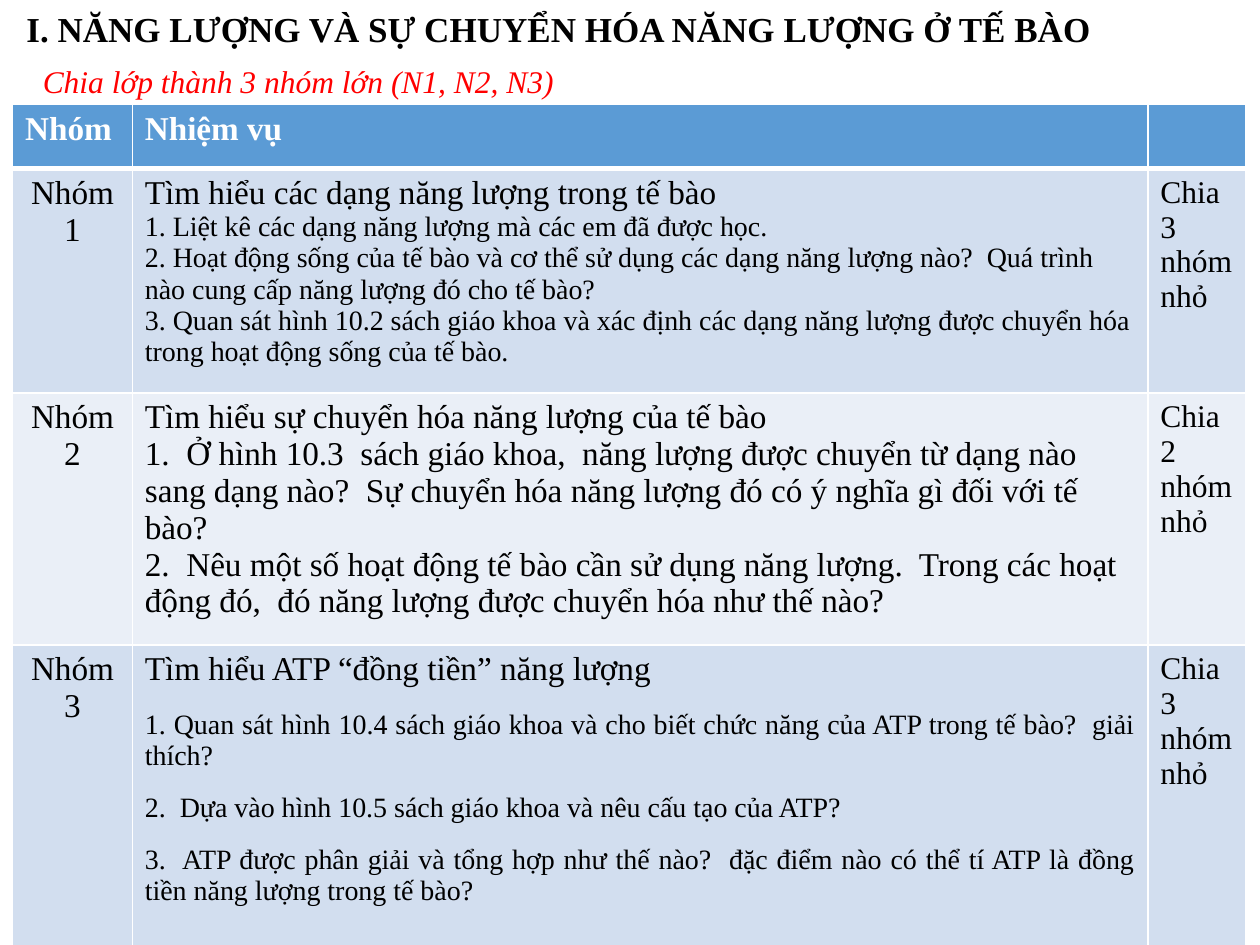
from dataclasses import dataclass

from lxml import etree
from pptx import Presentation
from pptx import util as u
from pptx.dml.color import RGBColor
from pptx.enum import text
from pptx.oxml.ns import qn

WIDE, HIGH = 10, 7.5
FACE = "Times New Roman"
BLACK, WHITE, RED = "000000", "FFFFFF", "FF0000"
HEAD, BAND, PALE = "5B9BD5", "D2DEEF", "EAEFF7"
COLS = [0.95, 8.06, 0.78]
ROWS = [0.51, 1.78, 2, 2.41]
LEFT, MID, JUST = text.PP_ALIGN.LEFT, text.PP_ALIGN.CENTER, text.PP_ALIGN.JUSTIFY


@dataclass
class Group:
    topic: str
    tasks: list[str]
    teams: int
    size: int = 16
    align: text.PP_ALIGN = LEFT
    gap: int = 0


GROUPS = [
    Group("Tìm hiểu các dạng năng lượng trong tế bào", [
        "1. Liệt kê các dạng năng lượng mà các em đã được học.",
        "2. Hoạt động sống của tế bào và cơ thể sử dụng các dạng năng lượng nào?  "
        "Quá trình nào cung cấp năng lượng đó cho tế bào?",
        "3. Quan sát hình 10.2 sách giáo khoa và xác định các dạng năng lượng "
        "được chuyển hóa trong hoạt động sống của tế bào."], 3),
    Group("Tìm hiểu sự chuyển hóa năng lượng của tế bào", [
        "1.  Ở hình 10.3  sách giáo khoa,  năng lượng được chuyển từ dạng nào "
        "sang dạng nào?  Sự chuyển hóa năng lượng đó có ý nghĩa gì đối với tế bào?",
        "2.  Nêu một số hoạt động tế bào cần sử dụng năng lượng.  Trong các hoạt "
        "động đó,  đó năng lượng được chuyển hóa như thế nào?"], 2, size=19),
    Group("Tìm hiểu ATP “đồng tiền” năng lượng", [
        "1. Quan sát hình 10.4 sách giáo khoa và cho biết chức năng của ATP "
        "trong tế bào?  giải thích?",
        "2.  Dựa vào hình 10.5 sách giáo khoa và nêu cấu tạo của ATP?",
        "3.  ATP được phân giải và tổng hợp như thế nào?  đặc điểm nào có thể tí "
        "ATP là đồng tiền năng lượng trong tế bào?"], 3, align=JUST, gap=6),
]


def tint(code: str) -> RGBColor:
    return RGBColor.from_string(code)


def write(para, words: str, size: float, code: str = BLACK, bold: bool = False,
          italic: bool = False, align: text.PP_ALIGN = LEFT, gap: float = 0) -> None:
    para.text = words
    para.alignment = align
    para.space_before = para.space_after = u.Pt(gap)
    font = para.font
    font.name, font.size, font.bold, font.italic = FACE, u.Pt(size), bold, italic
    font.color.rgb = tint(code)


def place(shape, left: float, top: float, width: float, height: float) -> None:
    shape.left, shape.top = u.Inches(left), u.Inches(top)
    shape.width, shape.height = u.Inches(width), u.Inches(height)


def edge(cell, side: str, points: float) -> None:
    line = etree.SubElement(cell._tc.get_or_add_tcPr(), qn(f"a:ln{side}"),
                            w=str(u.Pt(points)))
    fill = etree.SubElement(line, qn("a:solidFill"))
    etree.SubElement(fill, qn("a:srgbClr"), val=WHITE)


def dress(cell, row: int) -> None:
    for side in "LRTB":
        thick = (row, side) in ((0, "B"), (1, "T"))
        edge(cell, side, 3 if thick else 1)
    cell.fill.solid()
    cell.fill.fore_color.rgb = tint(HEAD if row == 0 else BAND if row % 2 else PALE)


def show(table, row: int, group: Group) -> None:
    name, task, split = (table.cell(row, col).text_frame for col in range(3))
    write(name.paragraphs[0], f"Nhóm {row}", 19, align=MID)
    write(task.paragraphs[0], group.topic, 19, align=group.align, gap=group.gap)
    for item in group.tasks:
        write(task.add_paragraph(), item, group.size, align=group.align, gap=group.gap)
    write(split.paragraphs[0], f"Chia {group.teams} nhóm nhỏ", 18)


def main() -> None:
    deck = Presentation()
    deck.slide_width, deck.slide_height = u.Inches(WIDE), u.Inches(HIGH)
    slide = deck.slides.add_slide(deck.slide_layouts[5])

    # Title
    title = slide.shapes.title
    place(title, 0.11, 0.05, 8.67, 0.84)
    frame = title.text_frame
    frame.auto_size = text.MSO_AUTO_SIZE.NONE
    frame.vertical_anchor = text.MSO_ANCHOR.TOP
    write(frame.paragraphs[0], "I. NĂNG LƯỢNG VÀ SỰ CHUYỂN HÓA NĂNG LƯỢNG Ở TẾ BÀO",
          20, bold=True)
    frame.paragraphs[0].line_spacing = 0.9

    # Instruction
    note = slide.shapes.add_textbox(0, 0, 0, 0)
    place(note, 0.16, 0.37, 9.23, 0.58)
    frame = note.text_frame
    frame.word_wrap = True
    frame.margin_left = u.Inches(0.18)
    frame.vertical_anchor = text.MSO_ANCHOR.MIDDLE
    write(frame.paragraphs[0], "Chia lớp thành 3 nhóm lớn (N1, N2, N3)", 18, RED,
          italic=True)
    frame.paragraphs[0].line_spacing = 0.9

    # Table grid
    grid = slide.shapes.add_table(len(ROWS), len(COLS), 0, 0, 0, 0)
    place(grid, 0.1, 0.83, sum(COLS), sum(ROWS))
    table = grid.table
    for col, width in zip(table.columns, COLS):
        col.width = u.Inches(width)
    for index, height in enumerate(ROWS):
        table.rows[index].height = u.Inches(height)
        for cell in table.rows[index].cells:
            dress(cell, index)

    # Table text
    for col, label in enumerate(["Nhóm", "Nhiệm vụ"]):
        write(table.cell(0, col).text_frame.paragraphs[0], label, 19, WHITE, bold=True)
    for row, group in enumerate(GROUPS, 1):
        show(table, row, group)

    deck.save("out.pptx")


if __name__ == "__main__":
    main()
